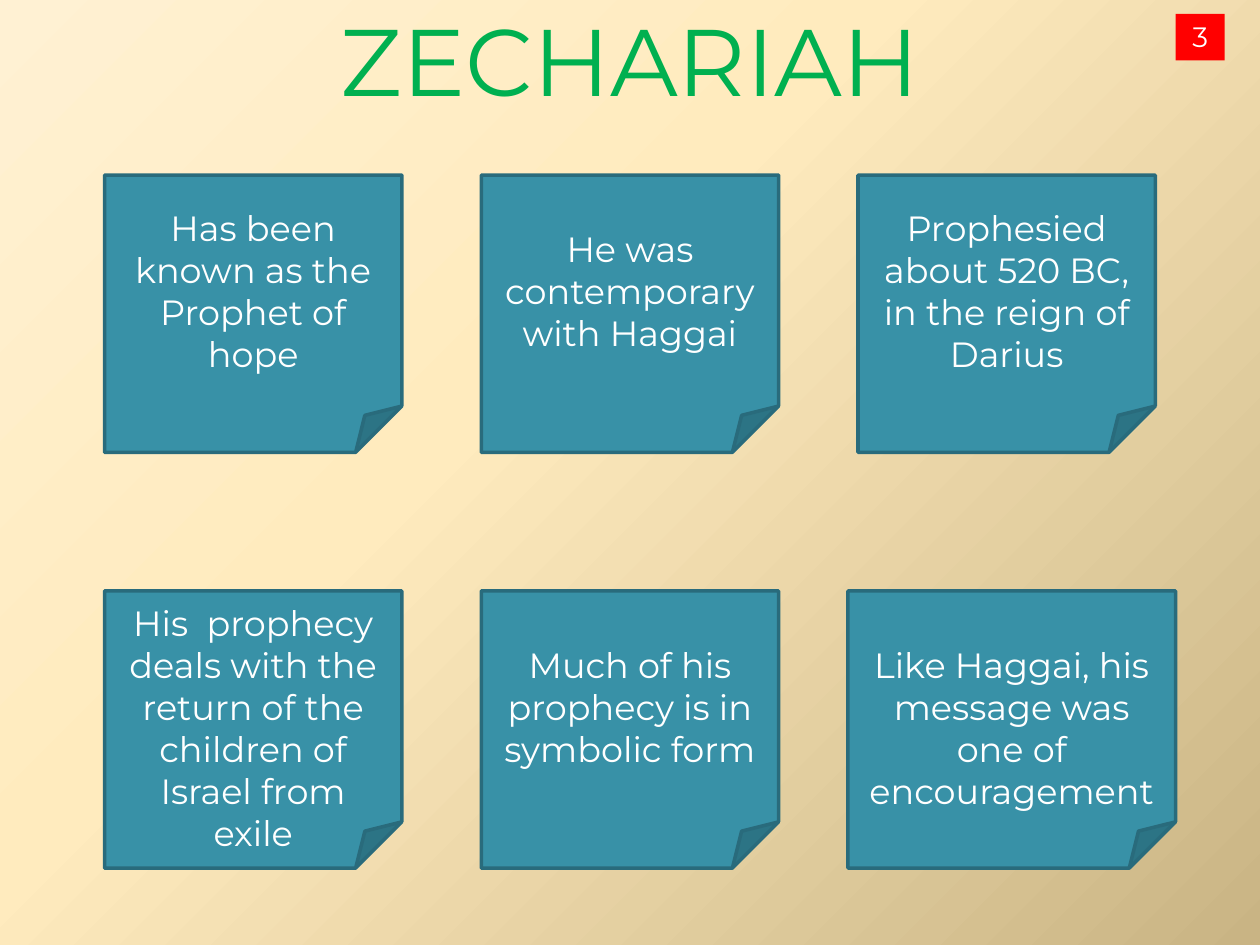
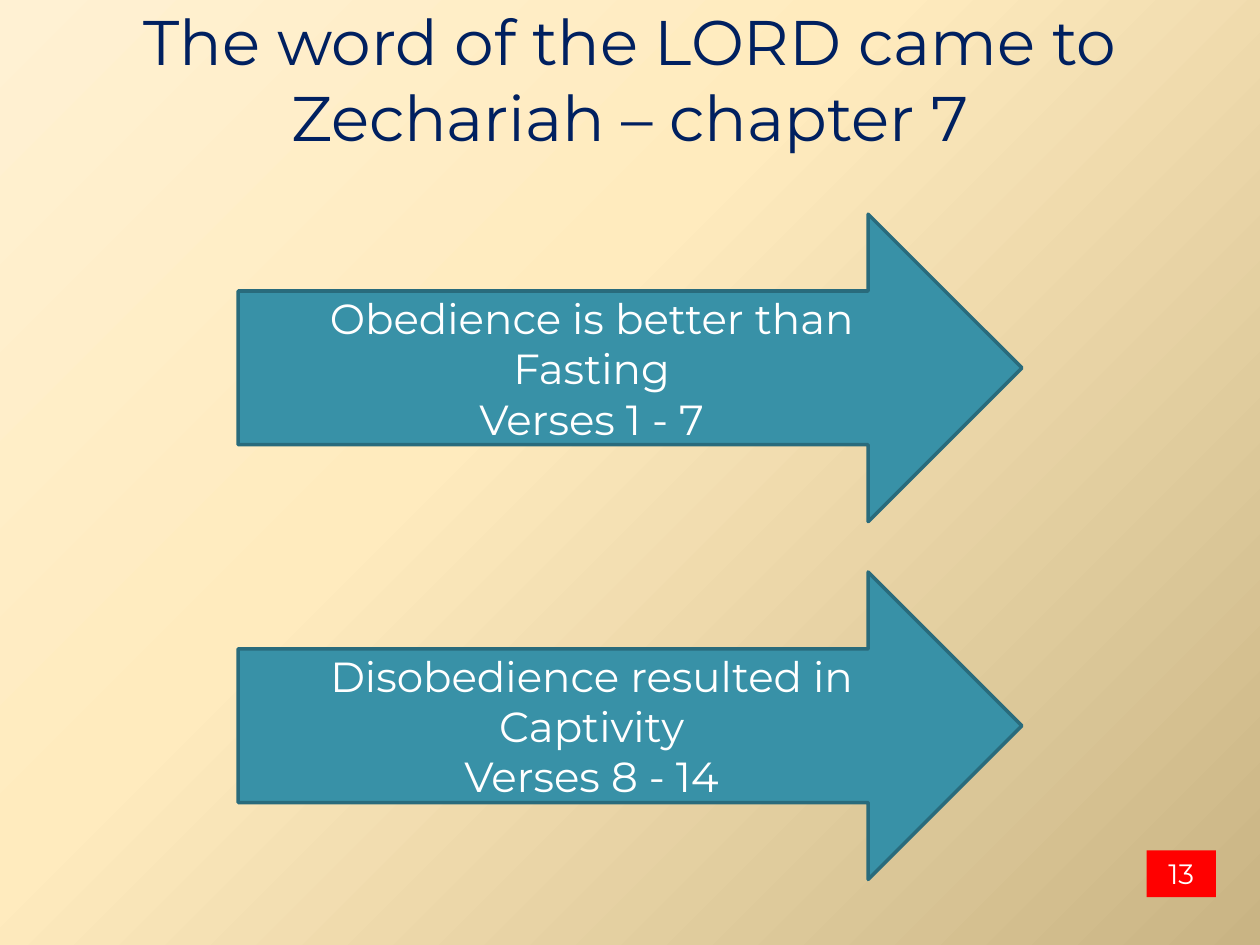
"""Build two slides on the prophet Zechariah: six note cards and two arrows."""
from pptx import Presentation
from pptx.dml.color import RGBColor as RGB
from pptx.enum.shapes import MSO_SHAPE as SHAPE
from pptx.enum.text import MSO_ANCHOR as ANCHOR, PP_ALIGN as ALIGN
from pptx.oxml import parse_xml
from pptx.oxml.ns import nsdecls, qn
from pptx.util import Inches, Pt

FONT = "Montserrat"
COLORS = {
    "teal": "3891A7", "teal_edge": "296B7C", "badge": "FF0000", "white": "FFFFFF",
    "green": "00B050", "navy": "002060",
}
BACKGROUND = [(0, "FFF1D3"), (40, "FFEBBE"), (100, "C9B484")]
WIDTH, HEIGHT = 10, 7.5
NOTE_W, NOTE_H = 2.36, 2.2
NOTE_LEFT, NOTE_TOP = 0.83, 1.39
COL_STEP, ROW_STEP = 2.99, 3.3
ARROW_W, ARROW_H = 6.22, 2.44
ARROW_TOP, ARROW_STEP = 1.7, 2.84
LOWERED = 0.38

NOTES = [
    ["Has been known as the Prophet of hope",
     "He was contemporary with Haggai",
     "Prophesied about 520 BC, in the reign of Darius"],
    ["His  prophecy deals with the return of the children of Israel from exile",
     "Much of his prophecy is in symbolic form",
     "Like Haggai, his message was one of encouragement"],
]
ARROWS = [
    "Obedience is better than Fasting\nVerses 1 - 7",
    "Disobedience resulted in Captivity\nVerses 8 - 14",
]


def rgb(name):
    return RGB.from_string(COLORS[name])


def set_background(master):
    master.background.fill.gradient()
    grad = next(master.element.iter(qn("a:gradFill")))
    stops = "".join(f'<a:gs pos="{pos * 1000}"><a:srgbClr val="{color}"/></a:gs>'
                    for pos, color in BACKGROUND)
    grad.getparent().replace(grad, parse_xml(
        f'<a:gradFill {nsdecls("a")} rotWithShape="1"><a:gsLst>{stops}</a:gsLst>'
        '<a:path path="circle"><a:fillToRect l="-24000" t="-20000" r="124000" b="120000"/>'
        '</a:path></a:gradFill>'))


def write(sp, text, size, color, wrap=True):
    tf = sp.text_frame
    tf.word_wrap = wrap
    tf.text = text
    for p in tf.paragraphs:
        p.alignment = ALIGN.CENTER
        for r in p.runs:
            r.font.name, r.font.size = FONT, Pt(size)
            r.font.color.rgb = rgb(color)
    return tf


def add_title(s, text, size, color, height):
    sp = s.shapes.add_textbox(0, Inches(-0.03), Inches(WIDTH), Inches(height))
    write(sp, text, size, color)


def add_block(s, kind, left, top, width, height, fill, edge=None):
    sp = s.shapes.add_shape(kind, *map(Inches, (left, top, width, height)))
    sp.shadow.inherit = False
    sp.fill.solid()
    sp.fill.fore_color.rgb = rgb(fill)
    if edge:
        sp.line.color.rgb = rgb(edge)
        sp.line.width = Pt(2)
    else:
        sp.line.fill.background()
    return sp


def add_note(s, text, col, row, extra=0.0, shift=0.0, inset=0.05):
    sp = add_block(s, SHAPE.FOLDED_CORNER, NOTE_LEFT + col * COL_STEP + shift,
                   NOTE_TOP + row * ROW_STEP, NOTE_W + extra, NOTE_H, "teal", "teal_edge")
    tf = write(sp, text, 20, "white")
    tf.vertical_anchor = ANCHOR.MIDDLE
    tf.margin_top = Inches(inset)


def add_arrow(s, text, row):
    sp = add_block(s, SHAPE.RIGHT_ARROW, (WIDTH - ARROW_W) / 2,
                   ARROW_TOP + row * ARROW_STEP, ARROW_W, ARROW_H, "teal", "teal_edge")
    write(sp, text, 24, "white").vertical_anchor = ANCHOR.MIDDLE


def add_badge(s, number, left, top, width):
    sp = add_block(s, SHAPE.RECTANGLE, left, top, width, 0.37, "badge")
    write(sp, number, 16, "white", wrap=False).vertical_anchor = ANCHOR.TOP


def build_notes(s):
    add_title(s, "ZECHARIAH", 54, "green", 1.01)
    special = {(1, 0): {"inset": LOWERED},
               (1, 2): {"inset": LOWERED, "extra": 0.24, "shift": -0.08}}
    for row, texts in enumerate(NOTES):
        for col, text in enumerate(texts):
            add_note(s, text, col, row, **special.get((row, col), {}))
    add_badge(s, "3", 9.33, 0.11, 0.39)


def build_arrows(s):
    add_title(s, "The word of the LORD came to Zechariah – chapter 7", 36, "navy", 1.31)
    for row, text in enumerate(ARROWS):
        add_arrow(s, text, row)
    add_badge(s, "13", 9.1, 6.75, 0.55)


def main():
    prs = Presentation()
    prs.slide_width, prs.slide_height = Inches(WIDTH), Inches(HEIGHT)
    set_background(prs.slide_master)
    for build in (build_notes, build_arrows):
        build(prs.slides.add_slide(prs.slide_layouts[6]))
    prs.save("out.pptx")


if __name__ == "__main__":
    main()
